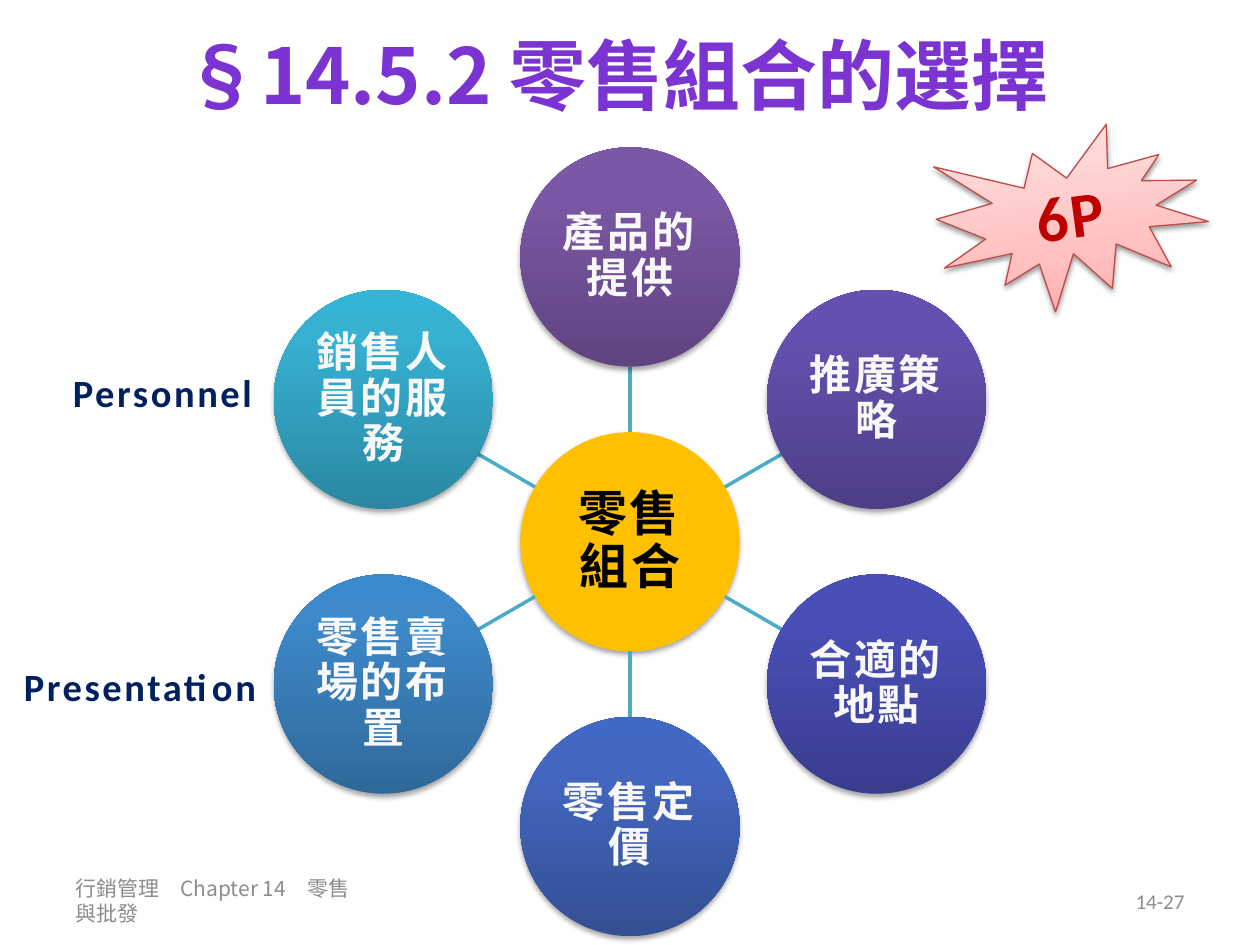
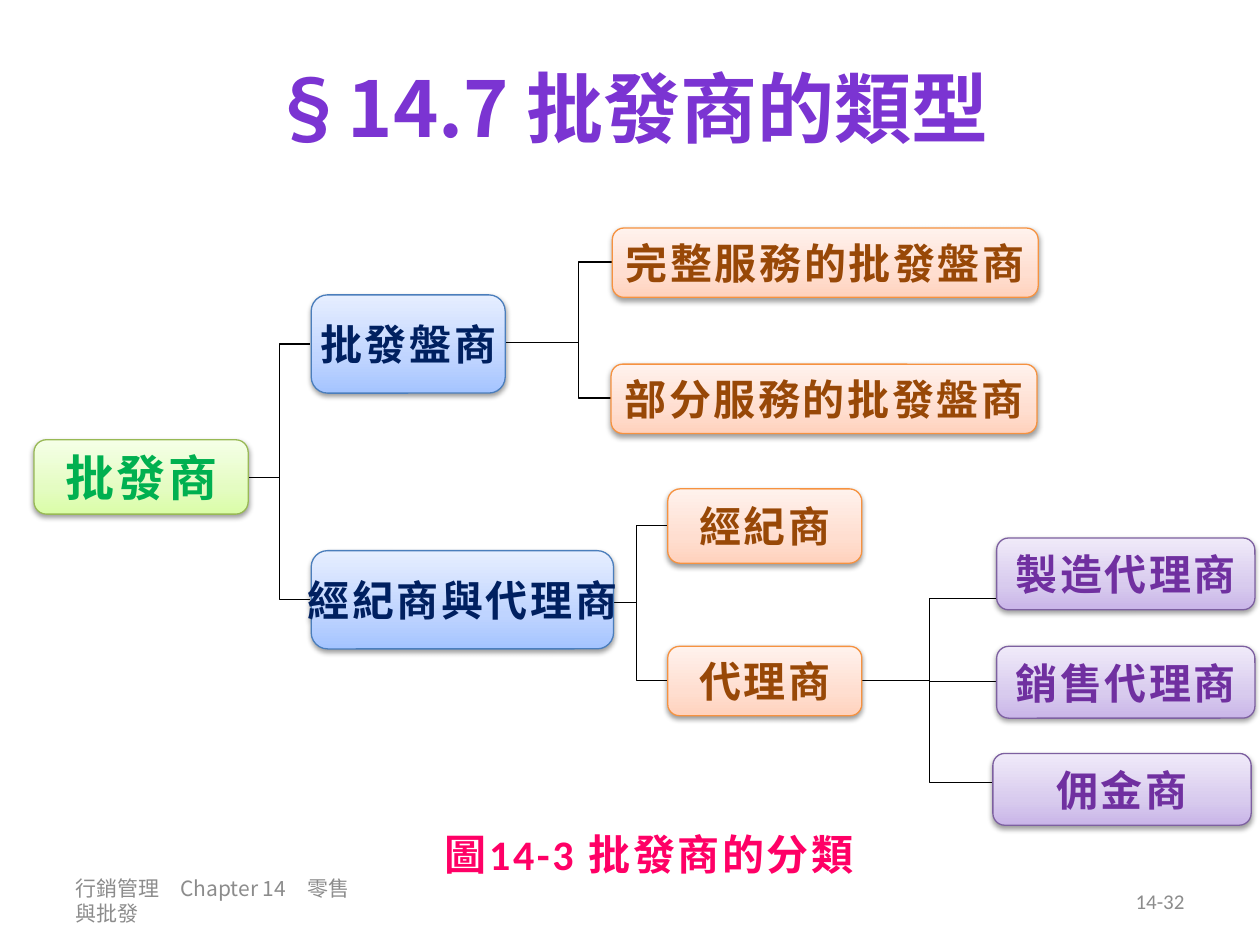
from math import cos, radians, sin

from lxml.etree import SubElement
from pptx import Presentation
from pptx.dml.color import RGBColor
from pptx.enum.shapes import MSO_CONNECTOR, MSO_SHAPE
from pptx.enum.text import MSO_ANCHOR, MSO_AUTO_SIZE, PP_ALIGN
from pptx.oxml.ns import qn
from pptx.util import Inches, Pt

LEFT, CENTER, RIGHT = PP_ALIGN.LEFT, PP_ALIGN.CENTER, PP_ALIGN.RIGHT
TOP, MIDDLE = MSO_ANCHOR.TOP, MSO_ANCHOR.MIDDLE
FIT_SHAPE, NO_FIT = MSO_AUTO_SIZE.SHAPE_TO_FIT_TEXT, MSO_AUTO_SIZE.NONE
STRAIGHT, ELBOW = MSO_CONNECTOR.STRAIGHT, MSO_CONNECTOR.ELBOW
OVAL, ROUNDED, BURST = MSO_SHAPE.OVAL, MSO_SHAPE.ROUNDED_RECTANGLE, MSO_SHAPE.EXPLOSION1

LATIN, CJK = "Calibri", "Noto Sans CJK SC"
TITLE_COLOR, FOOTER_COLOR, NAVY = "7B34D2", "8C8C8C", "002060"

# Box styles: gradient from bottom to top, outline, text colour
GREEN = (((0, "DAFDA7"), (35, "E4FCC2"), (100, "F5FFE7")), "98B955", "00B050")
BLUE = (((0, "A4C4FF"), (35, "BFD4FF"), (100, "E6EEFF")), "4B7EBC", NAVY)
ORANGE = (((0, "FFD2BD"), (35, "FFDED0"), (100, "FFF2ED")), "F69240", "984807")
PURPLE = (((0, "C9B5E8"), (35, "D8CBEE"), (100, "F0EAF9")), "7D60A0", "7030A0")
RED = (((0, "FFA6A5"), (35, "FFC0BF"), (100, "FFE7E7")), "BF4C48", "C00000")

# Clockwise from the top: label, gradient colours at 0, 80 and 100 %
RETAIL_MIX = [
    ("產品的提供", ("5F4480", "7B58A6", "7C57A8")),
    ("推廣策略", ("4D3E87", "6451AF", "6450B2")),
    ("合適的地點", ("393D8E", "4A4FB8", "484EBB")),
    ("零售定價", ("345094", "4468C1", "4168C4")),
    ("零售賣場的布置", ("2F699B", "3D89C9", "3B8ACD")),
    ("銷售人員的服務", ("2A88A2", "37B1D2", "34B4D6")),
]

# Label, left, top, width, height, style, text size
WHOLESALERS = [
    ("批發商", 0.27, 3.49, 1.7, 0.59, GREEN, 28),
    ("批發盤商", 2.47, 2.34, 1.54, 0.78, BLUE, 24),
    ("經紀商與代理商", 2.47, 4.37, 2.4, 0.78, BLUE, 24),
    ("完整服務的批發盤商", 4.86, 1.81, 3.38, 0.55, ORANGE, 24),
    ("部分服務的批發盤商", 4.85, 2.89, 3.38, 0.55, ORANGE, 24),
    ("經紀商", 5.3, 3.88, 1.54, 0.59, ORANGE, 24),
    ("代理商", 5.3, 5.13, 1.54, 0.55, ORANGE, 24),
    ("製造代理商", 7.91, 4.27, 2.05, 0.57, PURPLE, 24),
    ("銷售代理商", 7.91, 5.13, 2.05, 0.57, PURPLE, 24),
    ("佣金商", 7.88, 5.98, 2.05, 0.57, PURPLE, 24),
]

# Start point, x of the shared trunk, end points
BRANCHES = [
    ((1.96, 3.79), 2.22, [(2.46, 2.73), (2.46, 4.76)]),
    ((4.01, 2.72), 4.59, [(4.86, 2.08), (4.85, 3.16)]),
    ((4.87, 4.78), 5.05, [(5.3, 4.17), (5.3, 5.4)]),
    ((6.83, 5.4), 7.38, [(7.93, 4.75), (7.91, 5.41), (7.96, 6.21)]),
]


def rgb(color):
    return RGBColor.from_string(color)


def fill_gradient(shape, stops):
    """Fill upwards with (percent, colour) stops."""
    shape.fill.gradient()
    shape.fill.gradient_angle = 90
    stop_list = shape._element.spPr.find(qn("a:gradFill")).find(qn("a:gsLst"))
    for stop in list(stop_list):
        stop_list.remove(stop)
    for percent, color in stops:
        stop = SubElement(stop_list, qn("a:gs"), pos=str(percent * 1000))
        SubElement(stop, qn("a:srgbClr"), val=color)


def add_shadow(shape, opacity, distance):
    shape.shadow.inherit = False
    effects = shape._element.spPr.find(qn("a:effectLst"))
    shadow = SubElement(effects, qn("a:outerShdw"), blurRad=str(Pt(3.1)),
                        dist=str(Pt(distance)), dir="5400000", rotWithShape="0")
    color = SubElement(shadow, qn("a:srgbClr"), val="000000")
    SubElement(color, qn("a:alpha"), val=str(opacity * 1000))


class Deck:
    def __init__(self):
        self.presentation = Presentation()
        self.presentation.slide_width = Inches(10)
        self.presentation.slide_height = Inches(7.5)
        self.slide = None

    def set_text(self, shape, text, size, color, align=LEFT, anchor=MIDDLE,
                 font=LATIN, bold=True, spacing=1.5, wrap=True):
        frame = shape.text_frame
        frame.text = text
        frame.word_wrap = wrap
        frame.vertical_anchor = anchor
        paragraph = frame.paragraphs[0]
        paragraph.alignment = align
        paragraph.font.size = Pt(size)
        paragraph.font.bold = bold
        paragraph.font.name = font
        paragraph.font.color.rgb = rgb(color)
        properties = paragraph._p.pPr.find(qn("a:defRPr"))
        properties.set("spc", str(int(spacing * 100)))
        SubElement(properties, qn("a:ea"), typeface=CJK)
        return paragraph

    def add_slide(self, title, box, number):
        layout = self.presentation.slide_layouts[5]
        self.slide = self.presentation.slides.add_slide(layout)
        shape = self.slide.shapes.title
        shape.left, shape.top, shape.width, shape.height = map(Inches, box)
        self.set_text(shape, title, 44, TITLE_COLOR, CENTER, font=CJK, spacing=0)
        shape.text_frame.auto_size = NO_FIT
        self.text("行銷管理　Chapter 14　零售與批發", (0.5, 6.95, 2.45, 0.4), 12,
                  FOOTER_COLOR, font=CJK, bold=False, spacing=0)
        self.text(number, (7.17, 6.95, 2.33, 0.4), 12,
                  FOOTER_COLOR, RIGHT, bold=False, spacing=0)

    def text(self, text, box, size, color, align=LEFT, grow=False, **style):
        shape = self.slide.shapes.add_textbox(*map(Inches, box))
        self.set_text(shape, text, size, color, align, **style)
        shape.text_frame.auto_size = FIT_SHAPE if grow else NO_FIT

    def box(self, text, box, style, size, kind=ROUNDED, font=CJK):
        stops, outline, color = style
        shape = self.slide.shapes.add_shape(kind, *map(Inches, box))
        fill_gradient(shape, stops)
        shape.line.color.rgb = rgb(outline)
        shape.line.width = Pt(0.75)
        add_shadow(shape, 38, 1.6)
        self.set_text(shape, text, size, color, CENTER, font=font, wrap=False)
        return shape

    def circle(self, text, center, diameter, size, color):
        left, top = (Inches(value - diameter / 2) for value in center)
        shape = self.slide.shapes.add_shape(
            OVAL, left, top, Inches(diameter), Inches(diameter))
        shape.line.fill.background()
        add_shadow(shape, 35, 1.8)
        paragraph = self.set_text(shape, text, size, color, CENTER)
        paragraph.line_spacing = 0.9
        frame = shape.text_frame
        frame.margin_left = frame.margin_right = Inches(0.02)
        frame.margin_top = frame.margin_bottom = Inches(0.02)
        return shape

    def connector(self, start, end, color, width, kind=STRAIGHT):
        line = self.slide.shapes.add_connector(kind, *map(Inches, (*start, *end)))
        line.line.color.rgb = rgb(color)
        line.line.width = Pt(width)
        SubElement(line._element.spPr, qn("a:effectLst"))
        return line

    def branch(self, start, trunk, ends):
        """Join one start to several ends, all bending at the trunk."""
        for end in ends:
            line = self.connector(start, end, "000000", 0.75, ELBOW)
            geometry = line._element.spPr.find(qn("a:prstGeom"))
            adjustments = geometry.find(qn("a:avLst"))
            bend = (trunk - start[0]) / (end[0] - start[0])
            SubElement(adjustments, qn("a:gd"), name="adj1",
                       fmla=f"val {round(bend * 100000)}")


def build_retail_mix(deck):
    deck.add_slide("§14.5.2 零售組合的選擇", (0.5, 0, 8.78, 1.17), "14-27")
    burst = deck.box("6P", (7.44, 1.03, 2.14, 1.42), RED, 36, BURST, LATIN)
    burst.rotation = 352.3

    center, diameter, orbit = (5, 4.3), 1.74, 2.26

    def around(distance, angle):
        return center[0] + distance * sin(angle), center[1] - distance * cos(angle)

    hub = deck.circle("零售組合", center, diameter, 28, "000000")
    hub.fill.solid()
    hub.fill.fore_color.rgb = rgb("FFC000")
    for index, (label, colors) in enumerate(RETAIL_MIX):
        angle = radians(index * 360 / len(RETAIL_MIX))
        deck.connector(around(diameter / 2, angle),
                       around(orbit - diameter / 2, angle), "4BACC6", 2)
        circle = deck.circle(label, around(orbit, angle), diameter, 24, "F8F8F8")
        fill_gradient(circle, zip((0, 80, 100), colors))

    for label, box in [("Presentation", (0.09, 5.21, 2.09, 0.47)),
                       ("Personnel", (0.48, 2.88, 1.66, 0.47))]:
        deck.text(label, box, 22, NAVY, grow=True, anchor=TOP, wrap=False)


def build_wholesalers(deck):
    deck.add_slide("§14.7 批發商的類型", (0.5, 0.14, 9, 1.41), "14-32")
    for start, trunk, ends in BRANCHES:
        deck.branch(start, trunk, ends)
    for label, left, top, width, height, style, size in WHOLESALERS:
        font = LATIN if style is PURPLE else CJK
        deck.box(label, (left, top, width, height), style, size, font=font)
    deck.text("圖14-3 批發商的分類", (3.43, 6.53, 3.48, 0.5), 24, "FF0066",
              grow=True, anchor=TOP)


def main():
    deck = Deck()
    build_retail_mix(deck)
    build_wholesalers(deck)
    deck.presentation.save("out.pptx")


if __name__ == "__main__":
    main()
